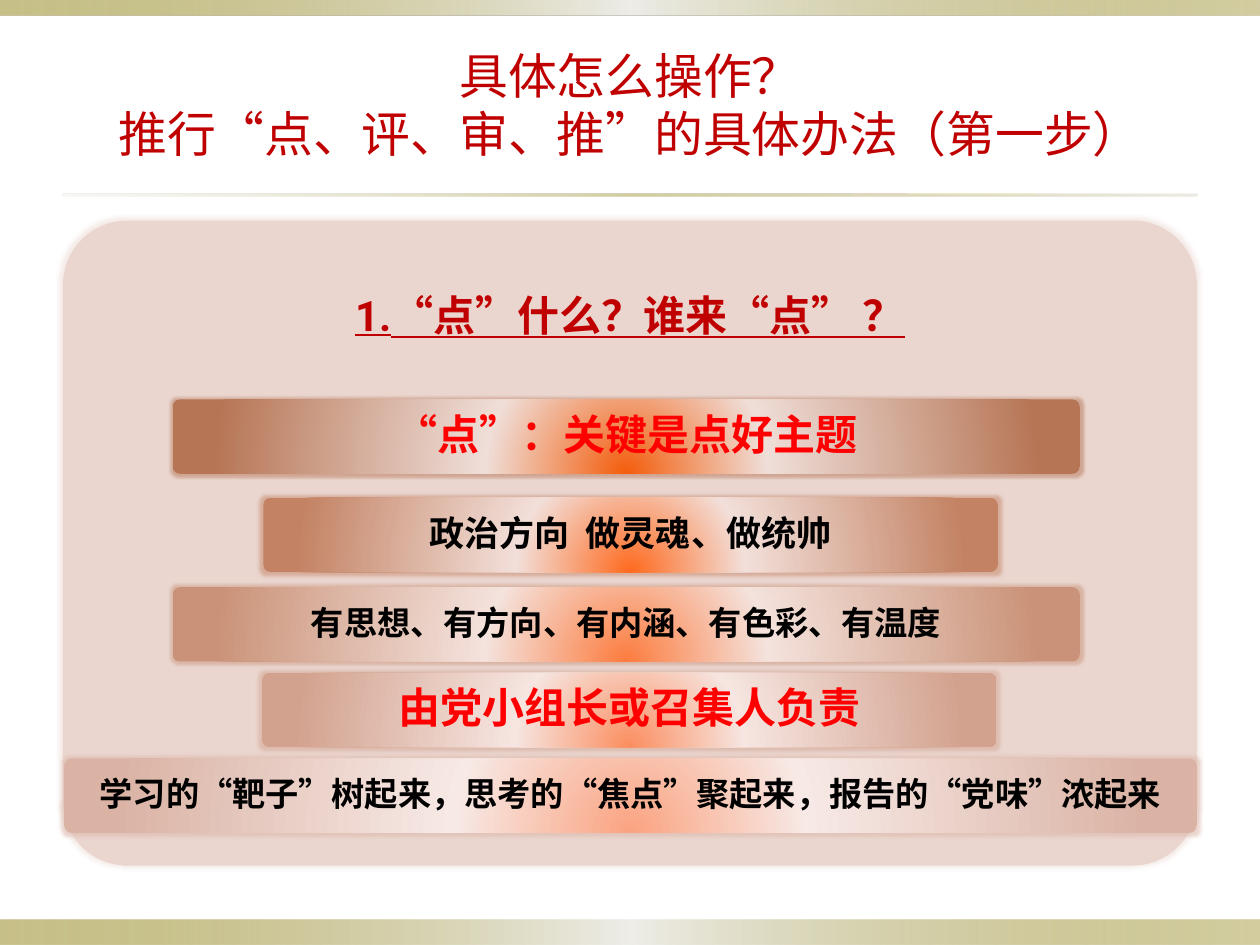
from dataclasses import dataclass

from lxml.etree import SubElement
from pptx import Presentation
from pptx.dml.color import RGBColor
from pptx.enum.shapes import MSO_SHAPE
from pptx.enum.text import MSO_ANCHOR, PP_ALIGN
from pptx.oxml.ns import qn
from pptx.util import Inches, Pt


@dataclass(frozen=True)
class Theme:
    font: str = "Roboto"
    title: str = "C00000"
    accent: str = "FF0000"
    body: str = "000000"
    panel: str = "EAD6CF"
    band: tuple = ((0, "918415", 50), (50, "EEEDE8", 100), (100, "918415", 40))
    rule: tuple = ((0, "DCD9CC", 20), (50, "918415", 40), (100, "DCD9CC", 50))
    title_size: float = 27.9
    title_leading: float = 33.5
    heading_size: int = 24
    body_size: int = 20
    detail_size: int = 19


class SlideBuilder:
    """Draws themed elements on the current slide."""

    def __init__(self, slide, theme):
        self.slide = slide
        self.theme = theme

    def add_gradient(self, shape, stops, radial=False):
        shape.fill.gradient()
        gradient = shape._element.spPr.find(qn("a:gradFill"))
        for child in list(gradient):
            gradient.remove(child)
        stop_list = SubElement(gradient, qn("a:gsLst"))
        for position, color, opacity in stops:
            stop = SubElement(stop_list, qn("a:gs"), pos=str(position * 1000))
            tint = SubElement(stop, qn("a:srgbClr"), val=color)
            if opacity < 100:
                SubElement(tint, qn("a:alpha"), val=str(opacity * 1000))
        if radial:
            focus = SubElement(gradient, qn("a:path"))
            focus.set("path", "circle")
            SubElement(focus, qn("a:fillToRect"), l="50000", t="150000", r="50000", b="0")
        else:
            SubElement(gradient, qn("a:lin"), ang="0", scaled="0")

    def add_glow(self, shape, color):
        effects = shape._element.spPr.find(qn("a:effectLst"))
        glow = SubElement(effects, qn("a:glow"), rad=str(Inches(0.05)))
        tint = SubElement(glow, qn("a:srgbClr"), val=color)
        SubElement(tint, qn("a:alpha"), val="50000")

    def add_box(self, kind, left, top, width, height):
        shape = self.slide.shapes.add_shape(
            kind, Inches(left), Inches(top), Inches(width), Inches(height))
        shape.shadow.inherit = False
        shape.line.fill.background()
        return shape

    def add_strip(self, left, top, width, height, stops):
        self.add_gradient(self.add_box(MSO_SHAPE.RECTANGLE, left, top, width, height), stops)

    def add_panel(self, left, top, width, height):
        shape = self.add_box(MSO_SHAPE.ROUNDED_RECTANGLE, left, top, width, height)
        shape.adjustments[0] = 0.1
        shape.fill.solid()
        shape.fill.fore_color.rgb = RGBColor.from_string(self.theme.panel)
        self.add_glow(shape, self.theme.panel)

    def add_bar(self, left, top, width, height, colors, text, size, color):
        shape = self.add_box(MSO_SHAPE.ROUNDED_RECTANGLE, left, top, width, height)
        shape.adjustments[0] = 0.1
        stops = [(position, tint, 100) for position, tint in zip((0, 31, 91), colors)]
        self.add_gradient(shape, stops, radial=True)
        self.add_glow(shape, colors[-1])
        self.set_text(shape.text_frame, [text], size, color, bold=True)

    def add_text(self, left, top, width, height, lines, size, **style):
        box = self.slide.shapes.add_textbox(
            Inches(left), Inches(top), Inches(width), Inches(height))
        self.set_text(box.text_frame, lines, size, self.theme.title, **style)

    def set_text(self, frame, lines, size, color, bold=False, underline=False, spacing=0.9):
        frame.word_wrap = True
        frame.vertical_anchor = MSO_ANCHOR.MIDDLE
        frame.margin_left = frame.margin_right = Inches(0.05)
        frame.margin_top = frame.margin_bottom = Inches(0.04)
        frame.text = "\n".join(lines)
        for paragraph in frame.paragraphs:
            paragraph.alignment = PP_ALIGN.CENTER
            paragraph.line_spacing = spacing
            font = paragraph.font
            font.name = self.theme.font
            font.size = Pt(size)
            font.bold = bold
            font.underline = underline
            font.color.rgb = RGBColor.from_string(color)


def main():
    presentation = Presentation()
    presentation.slide_width = Inches(10)
    presentation.slide_height = Inches(7.5)
    slide = presentation.slides.add_slide(presentation.slide_layouts[6])
    theme = Theme()
    builder = SlideBuilder(slide, theme)

    builder.add_strip(0, 7.3, 10, 0.2, theme.band)
    builder.add_strip(0, 0, 10, 0.12, theme.band)
    builder.add_strip(0.5, 1.54, 9, 0.02, theme.rule)
    builder.add_text(
        0.5, 0.2, 9, 1.25,
        ["具体怎么操作？", "推行“点、评、审、推”的具体办法（第一步）"],
        theme.title_size, spacing=Pt(theme.title_leading))
    builder.add_panel(0.5, 1.75, 9, 5.12)
    builder.add_text(
        0.5, 1.75, 9, 1.54, ["1.“点”什么？谁来“点” ？"],
        theme.heading_size, bold=True, underline=True)

    bars = [
        (1.37, 3.17, 7.2, ("F35D0C", "EFDED8", "B67555"),
         "“点”：关键是点好主题", theme.heading_size, theme.accent),
        (2.09, 3.95, 5.83, ("FE6A1F", "F2DFD9", "C38263"),
         "政治方向  做灵魂、做统帅", theme.body_size, theme.body),
        (1.37, 4.66, 7.2, ("FC7C3F", "F4E2DC", "CA9278"),
         "有思想、有方向、有内涵、有色彩、有温度", theme.detail_size, theme.body),
        (2.08, 5.34, 5.83, ("FB8E60", "F6E5E0", "D2A28E"),
         "由党小组长或召集人负责", theme.heading_size, theme.accent),
        (0.51, 6.02, 8.99, ("FAA381", "F7E9E5", "DAB3A5"),
         "学习的“靶子”树起来，思考的“焦点”聚起来，报告的“党味”浓起来",
         theme.detail_size, theme.body),
    ]
    for left, top, width, colors, text, size, color in bars:
        builder.add_bar(left, top, width, 0.59, colors, text, size, color)

    presentation.save("out.pptx")


if __name__ == "__main__":
    main()
